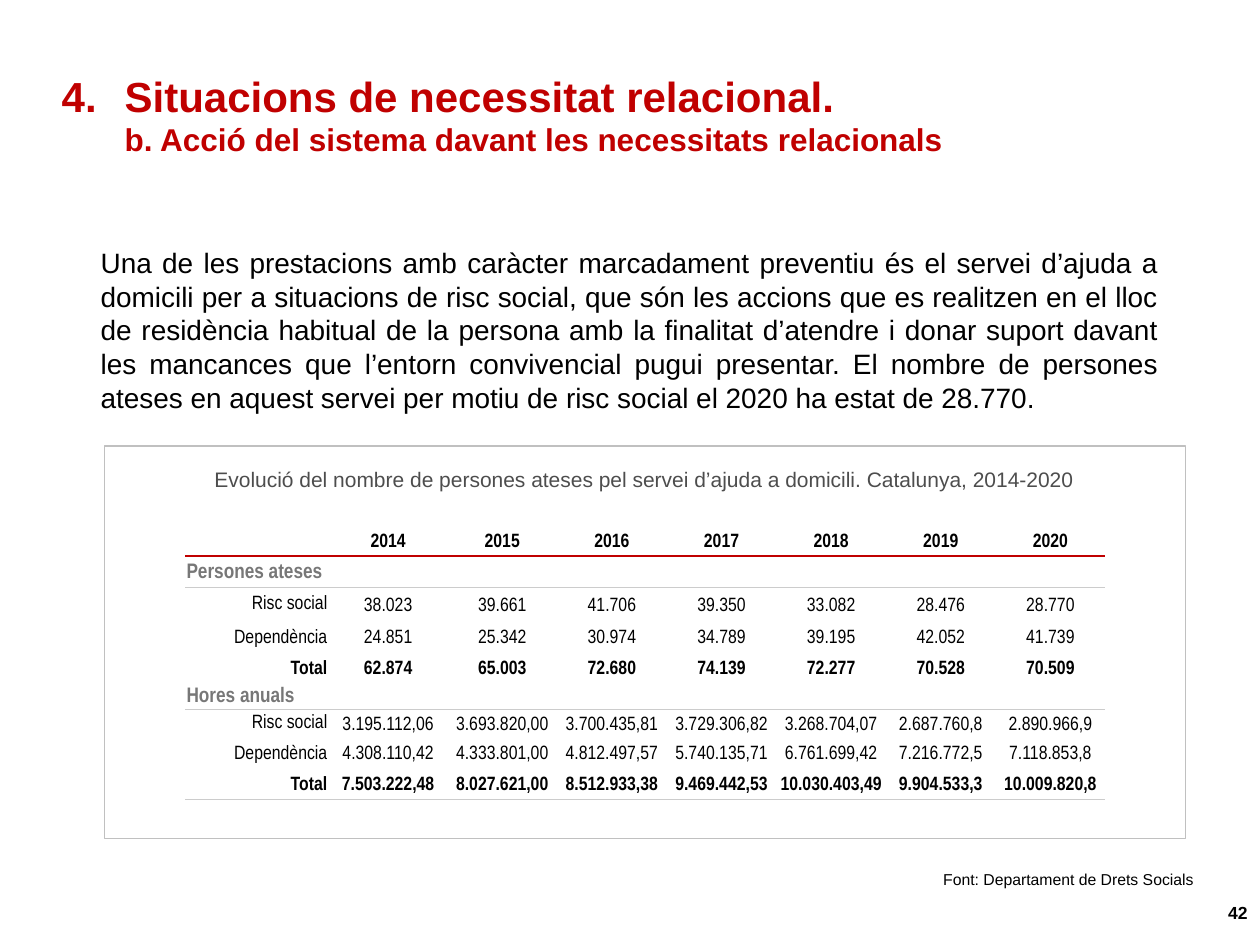
from dataclasses import dataclass

from lxml import etree
from pptx import Presentation
from pptx.dml.color import RGBColor
from pptx.enum.shapes import MSO_SHAPE
from pptx.enum.text import MSO_ANCHOR, MSO_AUTO_SIZE, PP_ALIGN
from pptx.oxml.ns import qn
from pptx.util import Cm, Pt

LEFT, CENTER, RIGHT, JUSTIFY = PP_ALIGN.LEFT, PP_ALIGN.CENTER, PP_ALIGN.RIGHT, PP_ALIGN.JUSTIFY
TOP, MIDDLE = MSO_ANCHOR.TOP, MSO_ANCHOR.MIDDLE
RECTANGLE = MSO_SHAPE.RECTANGLE
NO_AUTOFIT = MSO_AUTO_SIZE.NONE
TITLE_ONLY = 5


@dataclass(frozen=True)
class Theme:
    font: str = "Arial"
    narrow: str = "Arial Narrow"
    red: str = "C00000"
    black: str = "000000"
    white: str = "FFFFFF"
    frame: str = "C0C0C0"
    rule: str = "CCCCCC"
    caption: str = "4D4D4D"
    section: str = "777777"
    title_size: int = 24
    subtitle_size: int = 18
    body_size: int = 16
    caption_size: int = 12
    section_size: int = 12
    cell_size: int = 11
    number_size: int = 10
    source_size: int = 9


THEME = Theme()

BODY = (
    "Una de les prestacions amb caràcter marcadament preventiu és el servei d’ajuda a domicili "
    "per a situacions de risc social, que són les accions que es realitzen en el lloc de "
    "residència habitual de la persona amb la finalitat d’atendre i donar suport davant les "
    "mancances que l’entorn convivencial pugui presentar. El nombre de persones ateses en aquest "
    "servei per motiu de risc social el 2020 ha estat de 28.770."
)
CAPTION = "Evolució del nombre de persones ateses pel servei d’ajuda a domicili. Catalunya, 2014-2020"

TABLE_ROWS = [
    ["", "2014", "2015", "2016", "2017", "2018", "2019", "2020"],
    ["Persones ateses"],
    ["Risc social", "38.023", "39.661", "41.706", "39.350", "33.082", "28.476", "28.770"],
    ["Dependència", "24.851", "25.342", "30.974", "34.789", "39.195", "42.052", "41.739"],
    ["Total", "62.874", "65.003", "72.680", "74.139", "72.277", "70.528", "70.509"],
    ["Hores anuals"],
    ["Risc social", "3.195.112,06", "3.693.820,00", "3.700.435,81", "3.729.306,82",
     "3.268.704,07", "2.687.760,8", "2.890.966,9"],
    ["Dependència", "4.308.110,42", "4.333.801,00", "4.812.497,57", "5.740.135,71",
     "6.761.699,42", "7.216.772,5", "7.118.853,8"],
    ["Total", "7.503.222,48", "8.027.621,00", "8.512.933,38", "9.469.442,53",
     "10.030.403,49", "9.904.533,3", "10.009.820,8"],
]
COLUMN_WIDTHS = [2.9, 2.39] + [2.21] * 6
ROW_HEIGHTS = [0.64, 0.64, 0.66, 0.64, 0.61, 0.51, 0.58, 0.58, 0.66]
SECTION_SPAN = 5
# Rule under each row, by row index: colour and width in points
ROW_RULES = {0: (THEME.red, 1), 1: (THEME.rule, 0.75), 5: (THEME.rule, 0.75), 8: (THEME.rule, 0.75)}


def set_font(font, size, color=THEME.black, bold=False, name=THEME.font):
    font.name = name
    font.size = Pt(size)
    font.bold = bold
    font.color.rgb = RGBColor.from_string(color)


def add_title(page, number, heading, subheading):
    title = page.shapes.title
    title.left, title.top, title.width, title.height = Cm(0.99), Cm(1.6), Cm(23.8), Cm(1.4)
    frame = title.text_frame
    frame.auto_size = NO_AUTOFIT
    frame.vertical_anchor = MIDDLE
    para = frame.paragraphs[0]
    para.alignment = LEFT
    properties = para._p.get_or_add_pPr()
    properties.set("marL", str(Cm(1.27)))
    properties.set("indent", str(-Cm(1.27)))
    bullet = etree.SubElement(properties, qn("a:buAutoNum"))
    bullet.set("type", "arabicPeriod")
    bullet.set("startAt", str(number))
    set_font(para.font, THEME.title_size, THEME.red, True)
    for text, size in ((heading, THEME.title_size), (subheading, THEME.subtitle_size)):
        if para.runs:
            para.add_line_break()
        span = para.add_run()
        span.text = text
        set_font(span.font, size, THEME.red, True)


def add_text(page, text, left, top, width, height, size, align, anchor=TOP,
             color=THEME.black, bold=False, margin=None, spacing=None):
    box = page.shapes.add_textbox(Cm(left), Cm(top), Cm(width), Cm(height))
    frame = box.text_frame
    frame.word_wrap = True
    frame.vertical_anchor = anchor
    if margin is not None:
        frame.margin_left = frame.margin_right = Cm(margin)
        frame.margin_top = frame.margin_bottom = Cm(margin)
    para = frame.paragraphs[0]
    para.text = text
    para.alignment = align
    para.line_spacing = spacing
    set_font(para.font, size, color, bold)


def add_frame(page):
    box = page.shapes.add_shape(RECTANGLE, Cm(2.11), Cm(8.99), Cm(21.79), Cm(7.92))
    box.shadow.inherit = False
    box.fill.solid()
    box.fill.fore_color.rgb = RGBColor.from_string(THEME.white)
    box.line.color.rgb = RGBColor.from_string(THEME.frame)
    box.line.width = Pt(0.75)


def add_border(cell, side, rule):
    """Draw one cell border; rule is (colour, points), or None for no line."""
    line = etree.SubElement(cell._tc.get_or_add_tcPr(), qn(f"a:{side}"))
    if rule is None:
        etree.SubElement(line, qn("a:noFill"))
        return
    color, width = rule
    line.set("w", str(Pt(width)))
    fill = etree.SubElement(line, qn("a:solidFill"))
    etree.SubElement(fill, qn("a:srgbClr")).set("val", color)


def fill_cell(cell, text, align, spacing, size, color, bold):
    cell.margin_left = cell.margin_right = cell.margin_top = Cm(0.03)
    cell.margin_bottom = 0
    cell.vertical_anchor = MIDDLE
    cell.fill.background()
    para = cell.text_frame.paragraphs[0]
    para.text = text
    para.alignment = align
    para.line_spacing = spacing
    set_font(para.font, size, color, bold, THEME.narrow)


def add_service_table(page):
    graphic = page.shapes.add_table(
        len(ROW_HEIGHTS), len(COLUMN_WIDTHS), Cm(3.73), Cm(10.57),
        Cm(sum(COLUMN_WIDTHS)), Cm(sum(ROW_HEIGHTS)))
    table = graphic.table
    table.first_row = table.horz_banding = False
    for column, width in zip(table.columns, COLUMN_WIDTHS):
        column.width = Cm(width)
    for row, height in zip(table.rows, ROW_HEIGHTS):
        row.height = Cm(height)

    for r, texts in enumerate(TABLE_ROWS):
        is_section = len(texts) == 1
        bold = is_section or texts[0] in ("", "Total")
        size = THEME.section_size if is_section else THEME.cell_size
        color = THEME.section if is_section else THEME.black
        for c in range(len(COLUMN_WIDTHS)):
            cell = table.cell(r, c)
            for side, rule in (("lnL", None), ("lnR", None),
                               ("lnT", ROW_RULES.get(r - 1)), ("lnB", ROW_RULES.get(r))):
                add_border(cell, side, rule)
            text = texts[c] if c < len(texts) else ""
            align = LEFT if is_section else RIGHT if c == 0 else CENTER
            spacing = 0.75 if text == "Risc social" else Pt(12)
            fill_cell(cell, text, align, spacing, size, color, bold)
        if is_section:
            table.cell(r, 0).merge(table.cell(r, SECTION_SPAN - 1))


def main():
    deck = Presentation()
    deck.slide_width, deck.slide_height = Cm(25.4), Cm(19.05)
    page = deck.slides.add_slide(deck.slide_layouts[TITLE_ONLY])
    add_frame(page)
    add_text(page, "42", 19.48, 17.73, 5.92, 1.32, THEME.number_size, RIGHT, MIDDLE, bold=True)
    add_text(page, BODY, 1.78, 4.83, 21.82, 4.01, THEME.body_size, JUSTIFY)
    add_title(page, 4, "Situacions de necessitat relacional.",
              "b. Acció del sistema davant les necessitats relacionals")
    add_text(page, CAPTION, 2.29, 9.3, 21.41, 0.79, THEME.caption_size, CENTER,
             color=THEME.caption, margin=0.1)
    add_text(page, "Font: Departament de Drets Socials", 9.5, 17.12, 14.81, 1.19,
             THEME.source_size, RIGHT, MIDDLE, spacing=1.1)
    add_service_table(page)
    deck.save("out.pptx")


if __name__ == "__main__":
    main()
